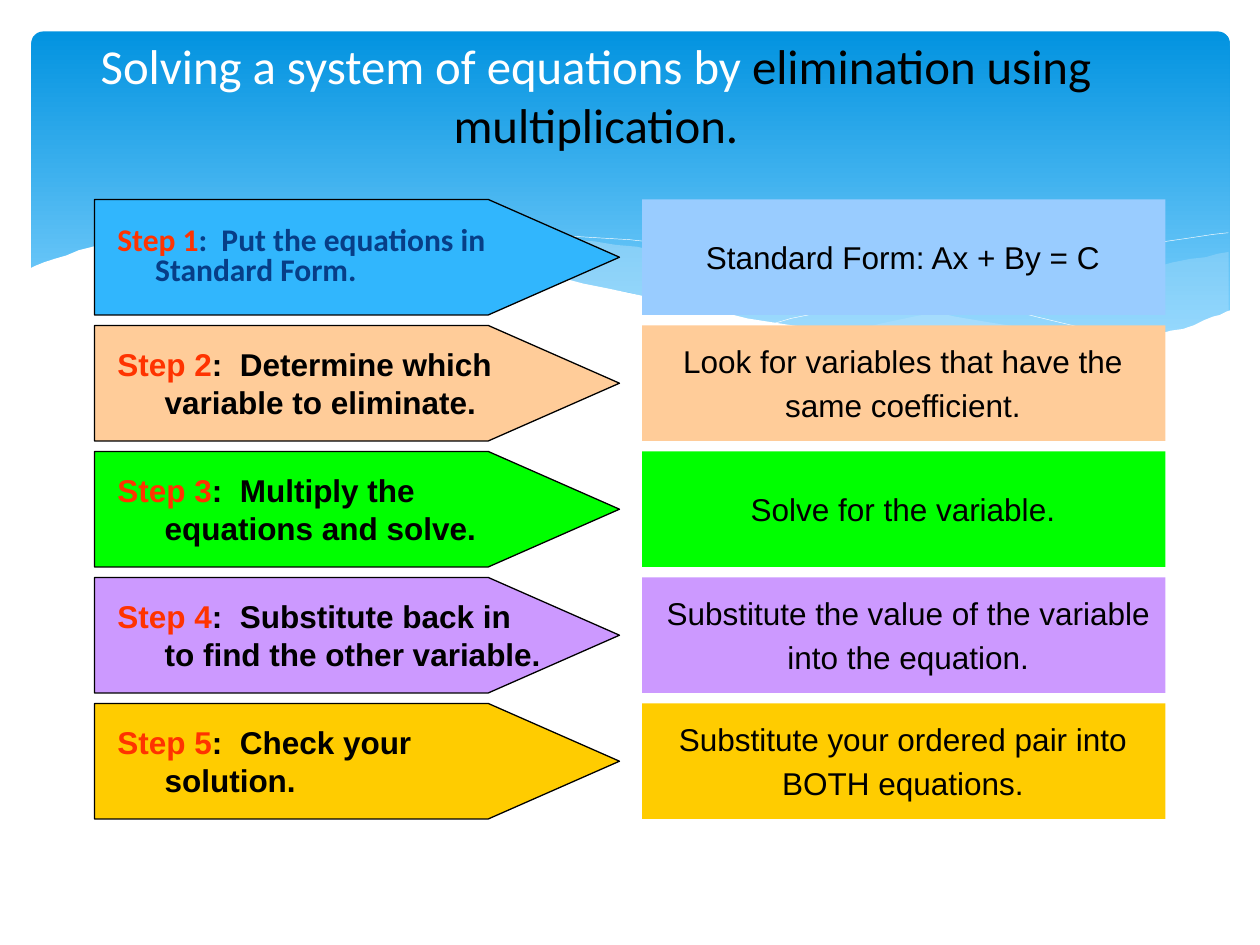
from typing import NamedTuple, Optional

from pptx import Presentation
from pptx.dml.color import RGBColor
from pptx.enum import shapes, text
from pptx.oxml import xmlchemy as xc
from pptx.util import Pt

WHITE = RGBColor(0xFF, 0xFF, 0xFF)
BLACK = RGBColor(0, 0, 0)
RED = RGBColor(0xFF, 0x33, 0x00)
NAVY = RGBColor(0x07, 0x3E, 0x87)
SKY_TOP = RGBColor(0x02, 0x93, 0xE0)
SKY_END = RGBColor(0x83, 0xD3, 0xFE)
MIST = RGBColor(0xC6, 0xE7, 0xFC)
BLUE = RGBColor(0x31, 0xB6, 0xFD)
PALE_BLUE = RGBColor(0x99, 0xCC, 0xFF)
PEACH = RGBColor(0xFF, 0xCC, 0x99)
GREEN = RGBColor(0, 0xFF, 0)
LILAC = RGBColor(0xCC, 0x99, 0xFF)
GOLD = RGBColor(0xFF, 0xCC, 0)

# Layout of the step rows, in points
TOP, PITCH, HEIGHT = 114, 72, 66
ARROW_LEFT, ARROW_WIDTH = 54, 300
BOX_LEFT, BOX_WIDTH = 367, 299
TEXT_TOP, TEXT_HEIGHT = 6, 54
ACTION_WIDTH = 258
CURVE_STEPS = 8  # straight pieces between two knots of a wave


class Wave(NamedTuple):
    edges: list  # each edge is a list of knots; edges meet at corners
    fill: Optional[RGBColor] = None  # without fill: an open white line
    alpha: int = 100  # percent


class TextStyle(NamedTuple):
    font: str
    size: float
    bold: bool = False
    align: text.PP_ALIGN = text.PP_ALIGN.LEFT
    indent: float = 0  # hanging indent
    spacing: float = 1
    before: float = 0


class Run(NamedTuple):
    text: str
    color: RGBColor


TITLE = TextStyle("Calibri", 27.9, align=text.PP_ALIGN.CENTER)
ACTION = TextStyle("Arial", 18, bold=True, indent=27)
FIRST_ACTION = TextStyle("Calibri", 18, bold=True, indent=21.6, spacing=0.8, before=3.6)
RESULT = TextStyle("Arial", 18, align=text.PP_ALIGN.CENTER, indent=27, before=3.6)


class Step(NamedTuple):
    action: str
    result: list
    arrow_fill: RGBColor
    box_fill: RGBColor
    style: TextStyle = ACTION
    color: RGBColor = BLACK
    result_width: float = 288


RIGHT_RIBBON = Wave([
    [(702, 144), (620, 160.5), (476, 191)],
    [(476, 191), (578, 200), (657, 193.5), (702, 178)]], MIST, 29)
MIDDLE_RIBBON = Wave([
    [(206, 137.5), (260, 133), (352, 139.5), (453, 160), (558, 183), (643, 196.5)],
    [(643, 196.5), (557, 200), (468, 190), (323, 160), (206, 137.5)]], MIST, 40)
LONG_CREST = Wave([[(222.5, 140.5), (312, 134.5), (458, 150), (653, 196)]])
SHORT_CREST = Wave([[(441.5, 185), (580, 151), (702, 133)]])
FRONT_WAVE = Wave([
    [(16.5, 153.5), (68.5, 137.5), (140, 132), (245, 142), (362, 168),
     (467, 188.5), (582, 199.5), (662, 191), (703.5, 177)],
    [(703.5, 237), (16.5, 237)]], WHITE)
WAVES = [RIGHT_RIBBON, MIDDLE_RIBBON, LONG_CREST, SHORT_CREST, FRONT_WAVE]

STEPS = [
    Step("Put the equations in Standard Form.", ["Standard Form: Ax + By = C"],
         BLUE, PALE_BLUE, FIRST_ACTION, NAVY),
    Step("Determine which variable to eliminate.",
         ["Look for variables that have the", "same coefficient."], PEACH, PEACH),
    Step("Multiply the equations and solve.", ["Solve for the variable."], GREEN, GREEN),
    Step("Substitute back in to find the other variable.",
         ["Substitute the value of the variable", "into the equation."],
         LILAC, LILAC, result_width=294),
    Step("Check your solution.",
         ["Substitute your ordered pair into", "BOTH equations."], GOLD, GOLD),
]


def smooth(knots: list) -> list:
    """Points of a Catmull-Rom curve that passes through every knot."""
    padded = [knots[0], *knots, knots[-1]]
    points = [knots[0]]
    for a, b, c, d in zip(padded, padded[1:], padded[2:], padded[3:]):
        for i in range(1, CURVE_STEPS + 1):
            t = i / CURVE_STEPS
            points.append(tuple(
                q + t * (r - p) / 2
                + t ** 2 * (2 * p - 5 * q + 4 * r - s) / 2
                + t ** 3 * (3 * q - p - 3 * r + s) / 2
                for p, q, r, s in zip(a, b, c, d)))
    return points


def set_fill(sp, color: RGBColor, alpha: int = 100) -> None:
    sp.fill.solid()
    sp.fill.fore_color.rgb = color
    if alpha < 100:
        clr = sp._element.spPr.find(xc.qn("a:solidFill"))[0]
        opacity = xc.OxmlElement("a:alpha")
        opacity.set("val", str(alpha * 1000))
        clr.append(opacity)


def set_line(sp, color: RGBColor, width: float) -> None:
    sp.line.color.rgb = color
    sp.line.width = Pt(width)


def add_wave(s, wave: Wave) -> None:
    points = [point for edge in wave.edges for point in smooth(edge)]
    builder = s.shapes.build_freeform(*points[0], scale=float(Pt(1)))
    builder.add_line_segments(points[1:], close=wave.fill is not None)
    sp = builder.convert_to_shape()
    sp.shadow.inherit = False
    if wave.fill is None:
        sp.fill.background()
        set_line(sp, WHITE, 0.25)
    else:
        sp.line.fill.background()
        set_fill(sp, wave.fill, wave.alpha)


def add_block(s, kind, left: float, top: float, width: float, height: float):
    sp = s.shapes.add_shape(kind, Pt(left), Pt(top), Pt(width), Pt(height))
    sp.shadow.inherit = False
    sp.line.fill.background()
    return sp


def add_text(s, left: float, top: float, width: float, height: float,
             paragraphs: list, style: TextStyle) -> None:
    tf = s.shapes.add_textbox(Pt(left), Pt(top), Pt(width), Pt(height)).text_frame
    tf.word_wrap = True
    tf.vertical_anchor = text.MSO_ANCHOR.MIDDLE
    for i, runs in enumerate(paragraphs):
        p = tf.add_paragraph() if i else tf.paragraphs[0]
        p.alignment = style.align
        p.line_spacing = style.spacing
        p.space_before = Pt(style.before)
        p.font.name, p.font.size, p.font.bold = style.font, Pt(style.size), style.bold
        pPr = p._p.get_or_add_pPr()
        pPr.set("marL", str(Pt(style.indent)))
        pPr.set("indent", str(-Pt(style.indent)))
        for run in runs:
            r = p.add_run()
            r.text = run.text
            r.font.color.rgb = run.color


def add_banner(s) -> None:
    banner = add_block(s, shapes.MSO_SHAPE.ROUNDED_RECTANGLE, 18, 18, 684.75, 194.5)
    banner.adjustments[0] = 0.034
    banner.fill.gradient()
    banner.fill.gradient_angle = 270
    sky = zip(banner.fill.gradient_stops, (SKY_TOP, SKY_END), (0, 0.9))
    for stop, color, position in sky:
        stop.color.rgb = color
        stop.position = position


def add_step(s, number: int, step: Step) -> None:
    top = TOP + (number - 1) * PITCH
    arrow = add_block(s, shapes.MSO_SHAPE.PENTAGON, ARROW_LEFT, top, ARROW_WIDTH, HEIGHT)
    arrow.adjustments[0] = 1.136
    set_fill(arrow, step.arrow_fill)
    set_line(arrow, BLACK, 0.75)
    box = add_block(s, shapes.MSO_SHAPE.RECTANGLE, BOX_LEFT, top, BOX_WIDTH, HEIGHT)
    set_fill(box, step.box_fill)

    action = [Run(f"Step {number}", RED), Run(f":  {step.action}", step.color)]
    add_text(s, ARROW_LEFT + 6, top + TEXT_TOP, ACTION_WIDTH, TEXT_HEIGHT,
             [action], step.style)
    result = [[Run(line, BLACK)] for line in step.result]
    add_text(s, BOX_LEFT + 5, top + TEXT_TOP, step.result_width, TEXT_HEIGHT,
             result, RESULT)


def main() -> None:
    prs = Presentation()
    prs.slide_width, prs.slide_height = Pt(720), Pt(540)
    s = prs.slides.add_slide(prs.slide_layouts[6])

    # Background banner with waves
    add_banner(s)
    for wave in WAVES:
        add_wave(s, wave)

    # Title
    title = [Run("Solving a system of equations by ", WHITE),
             Run("elimination using multiplication.", BLACK)]
    add_text(s, 15, 18, 651, 72, [title], TITLE)

    # Steps and their results
    for number, step in enumerate(STEPS, 1):
        add_step(s, number, step)

    prs.save("out.pptx")


if __name__ == "__main__":
    main()
